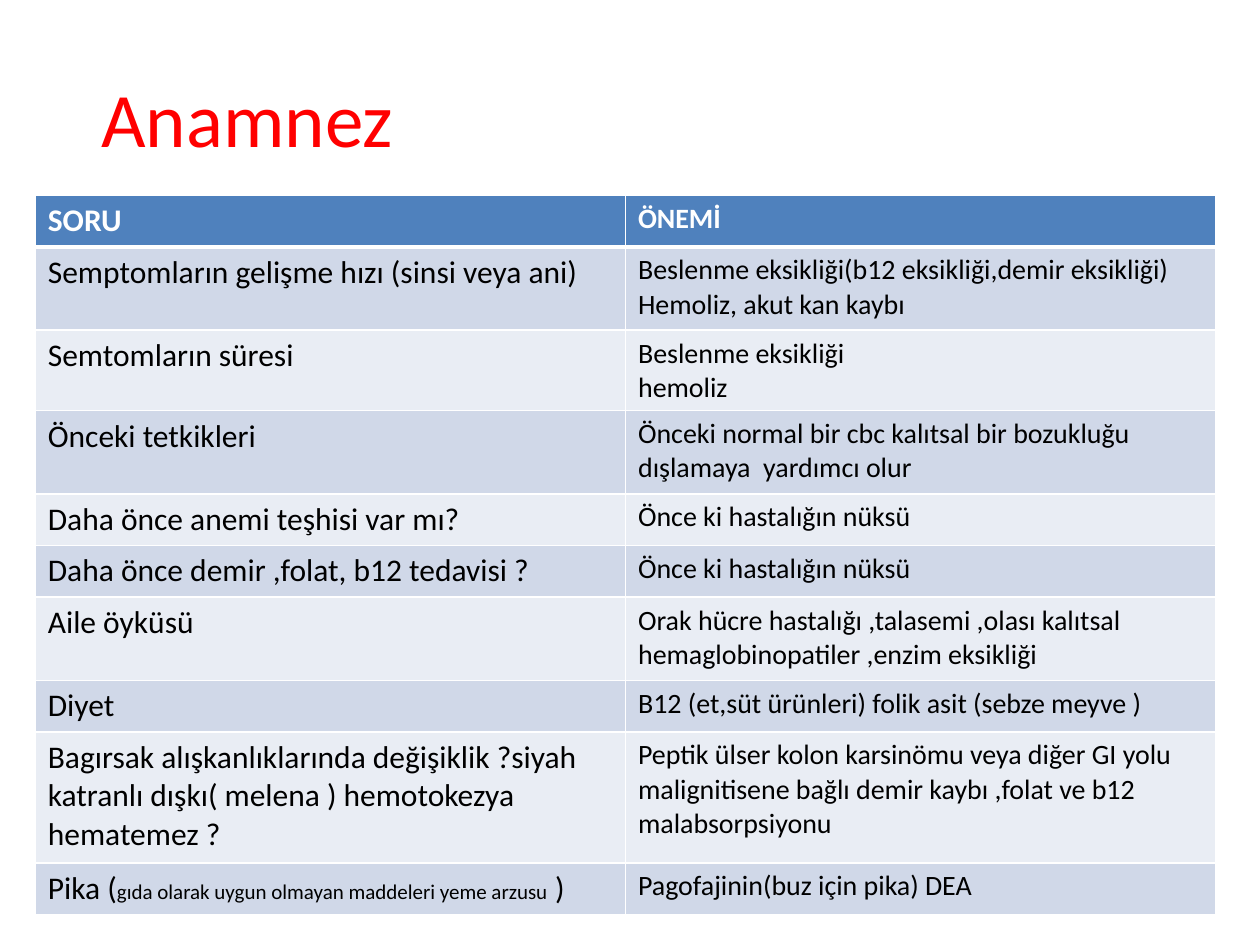
from typing import NamedTuple

from lxml.etree import SubElement
from pptx import Presentation
from pptx.dml.color import RGBColor
from pptx.enum.text import MSO_ANCHOR, PP_ALIGN
from pptx.oxml.ns import qn
from pptx.util import Inches, Pt

FONT = "Calibri"
WHITE, BLACK, RED = "FFFFFF", "000000", "FF0000"
HEADER_FILL = "4F81BD"
BAND_FILLS = ("E9EDF4", "D0D8E8")
QUESTION_SIZE, MEANING_SIZE, NOTE_SIZE = 18, 16, 12


class Row(NamedTuple):
    question: str
    meaning: str
    height: float
    note: str = ""
    ending: str = ""


ROWS = [
    Row("SORU", "ÖNEMİ", 0.41),
    Row("Semptomların gelişme hızı (sinsi veya ani)",
        "Beslenme eksikliği(b12 eksikliği,demir eksikliği)\nHemoliz, akut kan kaybı", 0.66),
    Row("Semtomların süresi", "Beslenme eksikliği\nhemoliz", 0.64),
    Row("Önceki tetkikleri",
        "Önceki normal bir cbc kalıtsal bir bozukluğu dışlamaya  yardımcı olur", 0.66),
    Row("Daha önce anemi teşhisi var mı?", "Önce ki hastalığın nüksü", 0.41),
    Row("Daha önce demir ,folat, b12 tedavisi ?", "Önce ki hastalığın nüksü", 0.41),
    Row("Aile öyküsü",
        "Orak hücre hastalığı ,talasemi ,olası kalıtsal hemaglobinopatiler ,enzim eksikliği", 0.66),
    Row("Diyet", "B12 (et,süt ürünleri) folik asit (sebze meyve )", 0.41),
    Row("Bagırsak alışkanlıklarında değişiklik ?siyah katranlı dışkı( melena ) "
        "hemotokezya hematemez ?",
        "Peptik ülser kolon karsinömu veya diğer GI yolu malignitisene bağlı demir kaybı "
        ",folat ve b12 malabsorpsiyonu", 1.04),
    Row("Pika (", "Pagofajinin(buz için pika) DEA", 0.41,
        "gıda olarak uygun olmayan maddeleri yeme arzusu", " )"),
]


def color(value: str) -> RGBColor:
    return RGBColor.from_string(value)


def style_paragraph(paragraph, size: int, value: str, bold: bool = False) -> None:
    font = paragraph.font
    font.name, font.size, font.bold = FONT, Pt(size), bold
    font.color.rgb = color(value)


def add_borders(cell, bottom: int, top: int) -> None:
    properties = cell._tc.get_or_add_tcPr()
    for side, width in (("L", 1), ("R", 1), ("T", top), ("B", bottom)):
        line = SubElement(properties, qn(f"a:ln{side}"), w=str(Pt(width)))
        fill = SubElement(line, qn("a:solidFill"))
        SubElement(fill, qn("a:srgbClr"), val=WHITE)


def fill_cell(cell, text: str, size: int, row_index: int) -> None:
    is_header = row_index == 0
    add_borders(cell, bottom=3 if is_header else 1, top=3 if row_index == 1 else 1)
    cell.fill.solid()
    cell.fill.fore_color.rgb = color(HEADER_FILL if is_header else BAND_FILLS[row_index % 2])
    cell.text = text
    for paragraph in cell.text_frame.paragraphs:
        style_paragraph(paragraph, size, WHITE if is_header else BLACK, is_header)


def add_title(slide, text: str) -> None:
    box = slide.shapes.add_textbox(Inches(0.5), Inches(0.3), Inches(2.93), Inches(1.25))
    frame = box.text_frame
    frame.word_wrap = True
    frame.vertical_anchor = MSO_ANCHOR.MIDDLE
    frame.text = text
    paragraph = frame.paragraphs[0]
    paragraph.alignment = PP_ALIGN.CENTER
    style_paragraph(paragraph, 44, RED)


def add_question_table(slide, rows: list[Row]) -> None:
    height = sum(row.height for row in rows)
    table = slide.shapes.add_table(
        len(rows), 2, Inches(0.28), Inches(1.55), Inches(9.37), Inches(height)).table
    for index, row in enumerate(rows):
        table.rows[index].height = Inches(row.height)
        question_cell = table.cell(index, 0)
        fill_cell(question_cell, row.question, QUESTION_SIZE, index)
        fill_cell(table.cell(index, 1), row.meaning, MEANING_SIZE, index)
        # Smaller remark inside the question
        if row.note:
            paragraph = question_cell.text_frame.paragraphs[0]
            for text, size in ((row.note, NOTE_SIZE), (row.ending, QUESTION_SIZE)):
                run = paragraph.add_run()
                run.text = text
                run.font.size = Pt(size)


def main() -> None:
    presentation = Presentation()
    presentation.slide_width, presentation.slide_height = Inches(10), Inches(7.5)
    slide = presentation.slides.add_slide(presentation.slide_layouts[6])
    add_title(slide, "Anamnez")
    add_question_table(slide, ROWS)
    presentation.save("out.pptx")


if __name__ == "__main__":
    main()
